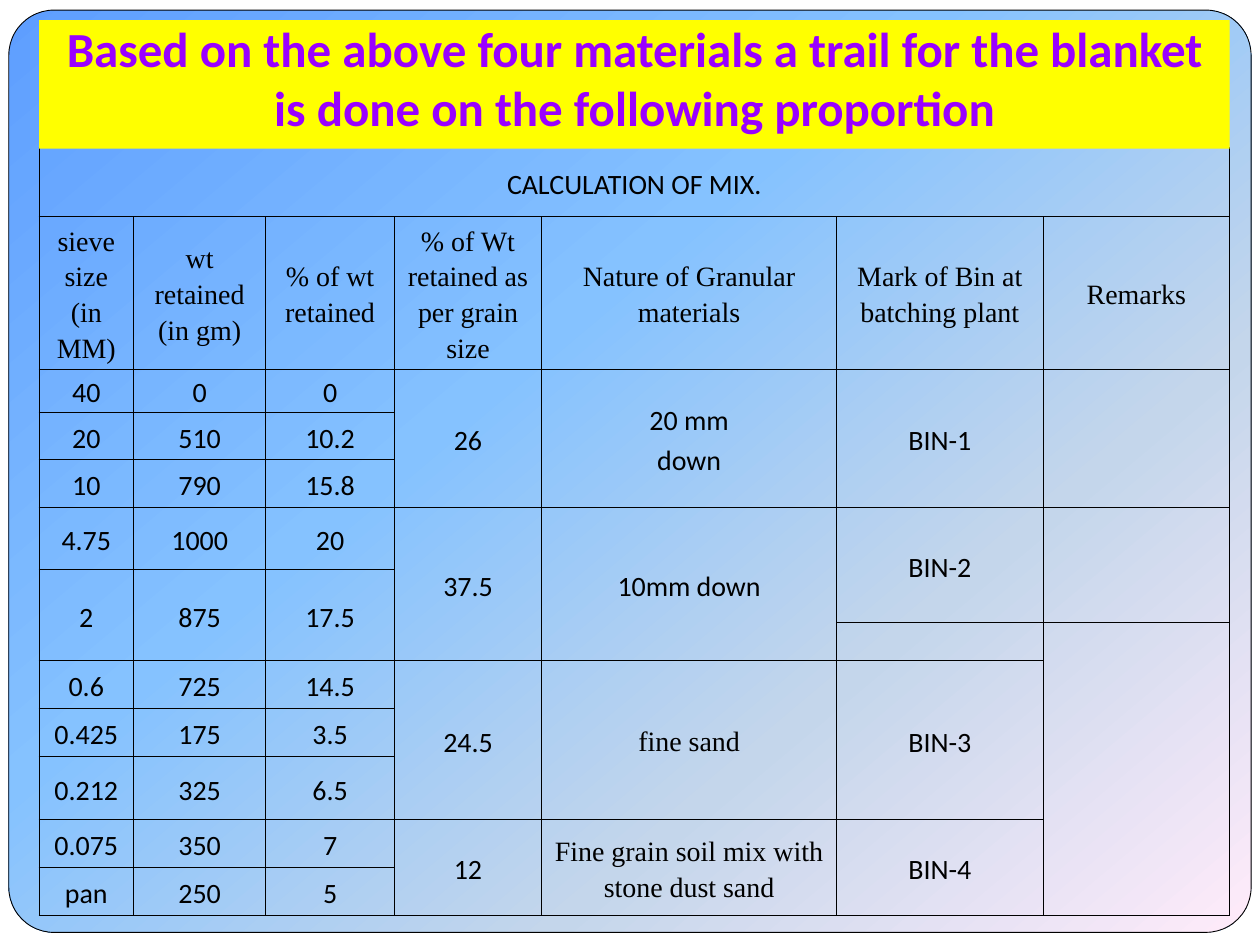
from dataclasses import dataclass

from lxml.etree import SubElement
from pptx import Presentation
from pptx.dml.color import RGBColor
from pptx.enum.shapes import MSO_SHAPE as Shape
from pptx.enum.text import MSO_ANCHOR as Anchor, PP_ALIGN as Align
from pptx.oxml import parse_xml
from pptx.oxml.ns import nsdecls, qn
from pptx.util import Inches, Pt


@dataclass(frozen=True)
class Theme:
    """Colours, fonts and type sizes of the slide."""
    ink: str = "000000"
    paper: str = "FFFFFF"
    banner: str = "FFFF00"
    heading: str = "9900FF"
    stops: tuple = ((0, "5E9EFF"), (40, "85C2FF"), (70, "C4D6EB"), (100, "FFEBFA"))
    angle: int = 50
    sans: str = "Calibri"
    serif: str = "Times New Roman"
    title_size: int = 28
    body_size: int = 16
    line: float = 0.5


THEME = Theme()
WIDTH, HEIGHT = 10, 7.5
LEFT, TABLE_TOP, TABLE_WIDTH = 0.31, 1.17, 9.45
COLUMNS = (0.75, 1.05, 1.02, 1.17, 2.34, 1.64, 1.48)
ROWS = (0.55, 1.21, 0.34, 0.38, 0.38, 0.49, 0.42, 0.29, 0.38, 0.38, 0.5, 0.38, 0.38)
HEADINGS = (
    "sieve size (in MM)", "wt retained (in gm)", "% of wt retained",
    "% of Wt retained as per grain size", "Nature of Granular materials",
    "Mark of Bin at batching plant", "Remarks",
)
SIEVES = (
    (2, "40", "0", "0"), (3, "20", "510", "10.2"), (4, "10", "790", "15.8"),
    (5, "4.75", "1000", "20"), (6, "2", "875", "17.5"), (8, "0.6", "725", "14.5"),
    (9, "0.425", "175", "3.5"), (10, "0.212", "325", "6.5"),
    (11, "0.075", "350", "7"), (12, "pan", "250", "5"),
)
MATERIALS = (
    (2, 3, "26", "20 mm\ndown", THEME.sans, "BIN-1", 3),
    (5, 3, "37.5", "10mm down", THEME.sans, "BIN-2", 2),
    (8, 3, "24.5", "fine sand", THEME.serif, "BIN-3", 3),
    (11, 2, "12", "Fine grain soil mix with stone dust sand", THEME.serif, "BIN-4", 2),
)
REMARK_SPANS = ((2, 3), (5, 2), (7, 6))


def rgb(value):
    """Turn a hex string into a colour."""
    return RGBColor.from_string(value)


def write(frame, text, font=THEME.sans, size=THEME.body_size, color=THEME.ink,
          bold=False, spacing=None):
    """Write centred text, one paragraph for each line."""
    for index, line in enumerate(text.split("\n")):
        para = frame.add_paragraph() if index else frame.paragraphs[0]
        para.alignment = Align.CENTER
        if spacing:
            para.line_spacing = spacing
        span = para.add_run()
        span.text = line
        span.font.name, span.font.size, span.font.bold = font, Pt(size), bold
        span.font.color.rgb = rgb(color)


def paint_gradient(fill, root):
    """Give a fill under the root element the theme's gradient."""
    fill.gradient()
    fill.gradient_angle = 360 - THEME.angle
    stop_list = next(root.iter(qn("a:gsLst")))
    for stop in list(stop_list):
        stop_list.remove(stop)
    for position, color in THEME.stops:
        stop = SubElement(stop_list, qn("a:gs"), pos=str(position * 1000))
        SubElement(stop, qn("a:srgbClr"), val=color)


def add_box(page, kind, left, top, width, height, color=None):
    """Add a flat shape without an outline."""
    box = page.shapes.add_shape(kind, *map(Inches, (left, top, width, height)))
    box.shadow.inherit = False
    box.line.fill.background()
    if color:
        box.fill.solid()
        box.fill.fore_color.rgb = rgb(color)
    return box


def add_backdrop(page):
    """Add the white sheet and the rounded gradient panel."""
    paint_gradient(page.background.fill, page._element)
    add_box(page, Shape.RECTANGLE, 0, 0, WIDTH, HEIGHT, THEME.paper)
    panel = add_box(page, Shape.ROUNDED_RECTANGLE, 0.07, 0.08, 9.86, 7.32)
    panel.adjustments[0] = 0.049
    paint_gradient(panel.fill, panel._element)
    panel.line.color.rgb = rgb(THEME.ink)
    panel.line.width = Pt(THEME.line)


def add_title(page, text):
    """Add the title on its coloured banner."""
    frame = add_box(page, Shape.RECTANGLE, LEFT, 0.16, TABLE_WIDTH, 1.02,
                    THEME.banner).text_frame
    frame.word_wrap = True
    frame.vertical_anchor = Anchor.BOTTOM
    frame.margin_left = frame.margin_right = frame.margin_bottom = Inches(0.1)
    frame.margin_top = Inches(0.05)
    write(frame, text, size=THEME.title_size, color=THEME.heading, bold=True)


def style_cell(cell):
    """Clear a cell's fill and rule its four sides."""
    cell.fill.background()
    cell.vertical_anchor = Anchor.MIDDLE
    cell.margin_left = cell.margin_right = Inches(0.07)
    cell.margin_top = cell.margin_bottom = 0
    properties = cell._tc.get_or_add_tcPr()
    for index, side in enumerate("LRTB"):
        properties.insert(index, parse_xml(
            f'<a:ln{side} {nsdecls("a")} w="{Pt(THEME.line)}"><a:solidFill>'
            f'<a:srgbClr val="{THEME.ink}"/></a:solidFill></a:ln{side}>'))


def fill_cell(table, row, column, text="", rows=1, columns=1, font=THEME.sans):
    """Merge a block of cells and write its text."""
    cell = table.cell(row, column)
    if rows * columns > 1:
        cell.merge(table.cell(row + rows - 1, column + columns - 1))
    if text:
        write(cell.text_frame, text, font=font, spacing=1.15)


def add_mix_table(page):
    """Add the table of sieves, materials and bins."""
    table = page.shapes.add_table(
        len(ROWS), len(COLUMNS), Inches(LEFT), Inches(TABLE_TOP),
        Inches(TABLE_WIDTH), Inches(sum(ROWS))).table
    table.first_row = table.horz_banding = False
    for column, width in zip(table.columns, COLUMNS):
        column.width = Inches(width)
    for row, height in zip(table.rows, ROWS):
        row.height = Inches(height)
    for cell in table.iter_cells():
        style_cell(cell)
    fill_cell(table, 0, 0, "CALCULATION OF MIX.", columns=len(COLUMNS))
    for column, heading in enumerate(HEADINGS):
        fill_cell(table, 1, column, heading, font=THEME.serif)
    for row, *values in SIEVES:
        for column, value in enumerate(values):
            fill_cell(table, row, column, value, rows=2 if row == 6 else 1)
    for row, rows, share, nature, font, mark, mark_rows in MATERIALS:
        fill_cell(table, row, 3, share, rows)
        fill_cell(table, row, 4, nature, rows, font=font)
        fill_cell(table, row, 5, mark, mark_rows)
    for row, rows in REMARK_SPANS:
        fill_cell(table, row, 6, rows=rows)


def main():
    """Build the slide and save it."""
    deck = Presentation()
    deck.slide_width, deck.slide_height = Inches(WIDTH), Inches(HEIGHT)
    page = deck.slides.add_slide(deck.slide_layouts[6])
    add_backdrop(page)
    add_mix_table(page)
    add_title(page, "Based on the above four materials a trail for the blanket "
                    "is done on the following proportion")
    deck.save("out.pptx")


if __name__ == "__main__":
    main()
